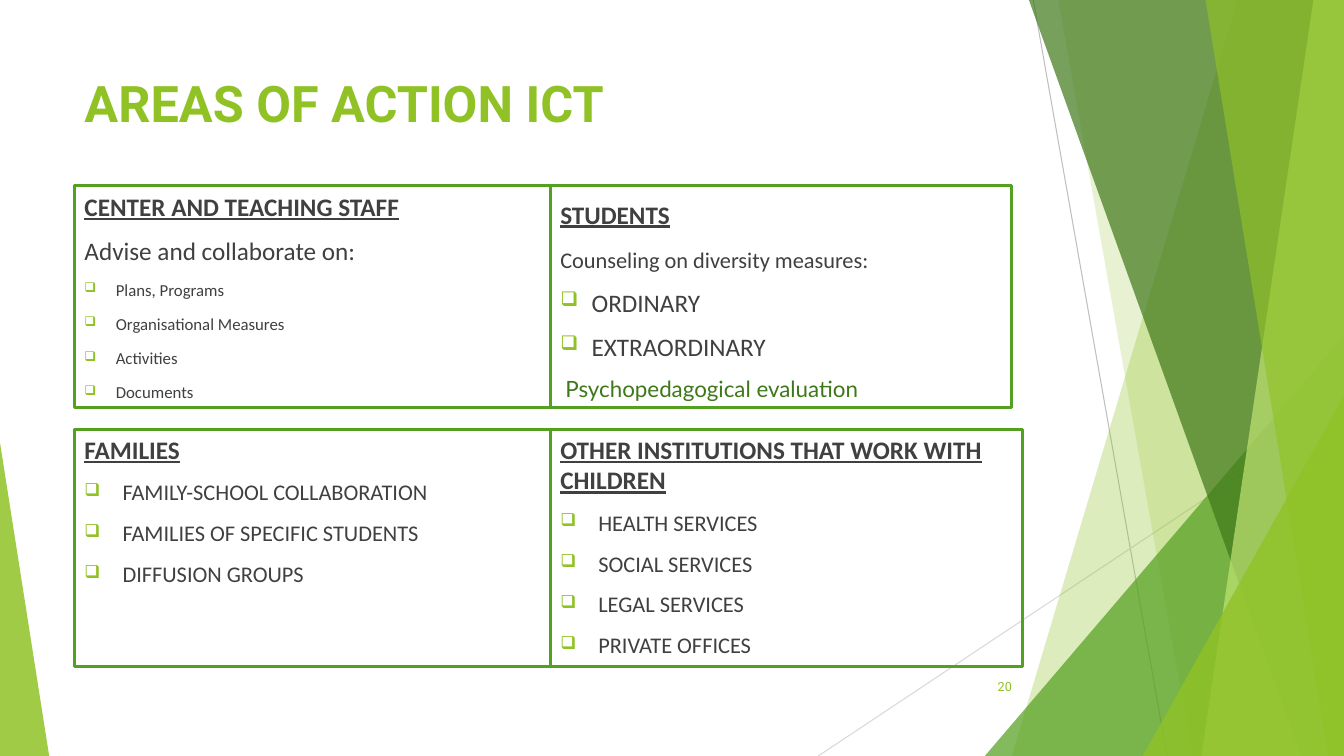
from lxml import etree
from pptx import Presentation
from pptx.dml.color import RGBColor
from pptx.enum.shapes import MSO_CONNECTOR, MSO_SHAPE
from pptx.enum.text import MSO_ANCHOR, PP_ALIGN
from pptx.oxml.ns import qn
from pptx.util import Cm, Pt

LINE, RECT, TRI = MSO_CONNECTOR.STRAIGHT, MSO_SHAPE.RECTANGLE, MSO_SHAPE.ISOSCELES_TRIANGLE
TOP, MID, BOTTOM = MSO_ANCHOR.TOP, MSO_ANCHOR.MIDDLE, MSO_ANCHOR.BOTTOM
LEFT, RIGHT = PP_ALIGN.LEFT, PP_ALIGN.RIGHT

HUES = {"lime": "90C226", "green": "54A021", "dark": "3F7819", "pale": "C0E474",
        "text": "404040", "gray": "BFBFBF", "mist": "D9D9D9"}
WIDE, HIGH = 33.87, 19.05

# Content: each line is (text, format)
TITLE, PAGE = "AREAS OF ACTION ICT", "20"
HEAD = {"bold": True, "under": True}
SMALL = {"size": 12, "hang": 0.79}
LARGE = {"hang": 0.79}
ITEM = {"size": 16, "hang": 0.96}
STAFF = [("CENTER AND TEACHING STAFF", HEAD), ("Advise and collaborate on:", {})] + [
    (t, SMALL) for t in ("Plans, Programs", "Organisational Measures", "Activities", "Documents")]
PUPILS = [("STUDENTS", HEAD),
          ("Counseling on diversity measures:", {"size": 16, "before": 12}),
          ("ORDINARY", LARGE), ("EXTRAORDINARY", LARGE),
          ("Psychopedagogical evaluation",
           {"size": 16, "font": "Lato", "hue": "dark", "indent": 0.13})]
HOMES = [("FAMILIES", HEAD)] + [
    (t, ITEM) for t in ("FAMILY-SCHOOL COLLABORATION", "FAMILIES OF SPECIFIC STUDENTS",
                        "DIFFUSION GROUPS")]
OTHERS = [("OTHER INSTITUTIONS THAT WORK WITH CHILDREN", HEAD)] + [
    (t, ITEM) for t in ("HEALTH SERVICES", "SOCIAL SERVICES", "LEGAL SERVICES",
                        "PRIVATE OFFICES")]

# Panels: left column, right column and its width, per row
COL, MIDX = 1.88, 13.87
ROWS = [(4.67, 5.59, BOTTOM, 11.63, STAFF, PUPILS),
        (10.82, 5.97, TOP, 11.89, HOMES, OTHERS)]

# Backdrop, back to front
RAYS = [(26.04, 0, 29.41, HIGH, "gray"), (WIDE, 10.24, 20.62, HIGH, "mist")]
BANDS = [  # ("band", top x, bottom x, hue, alpha) or ("tri", x, y, apex, hue, alpha)
    ("band", 31.19, 25.5, "lime", 30),
    ("band", 26.67, 30.05, "lime", 20),
    ("tri", 24.82, 8.46, 9.05, 1, "green", 72),
    ("band", 25.93, 32.79, "dark", 70),
    ("band", 33.1, 30.28, "pale", 70),
    ("band", 30.38, 33.48, "lime", 65),
    ("tri", 28.8, 9.98, 5.07, 1, "lime", 80),
    ("tri", 0, 11.15, 1.24, 0, "lime", 85)]

deck = Presentation()
deck.slide_width, deck.slide_height = Cm(WIDE), Cm(HIGH)
slide = deck.slides.add_slide(deck.slide_layouts[6])
shapes = slide.shapes


def color(name):
    return RGBColor.from_string(HUES[name])


def tint(shape, hue, alpha):
    shape.shadow.inherit = False
    shape.line.fill.background()
    shape.fill.solid()
    shape.fill.fore_color.rgb = color(hue)
    mark = shape.fill._xPr.find(qn("a:solidFill"))[0]
    etree.SubElement(mark, qn("a:alpha"), val=str(alpha * 1000))


def write(para, text, size=18, font="Calibri", hue="text", bold=False, under=False,
          align=LEFT, before=10, hang=0, indent=0):
    para.alignment, para.space_before = align, Pt(before)
    run = para.add_run()
    run.text = text
    face = run.font
    face.size, face.name, face.bold, face.underline = Pt(size), font, bold, under
    face.color.rgb = color(hue)
    props = para._p.get_or_add_pPr()
    if hang:
        props.set("marL", str(Cm(hang)))
        props.set("indent", str(-Cm(hang)))
        tone = etree.SubElement(props, qn("a:buClr"))
        etree.SubElement(tone, qn("a:srgbClr"), val=HUES["lime"])
        etree.SubElement(props, qn("a:buSzPct"), val="80000")
        etree.SubElement(props, qn("a:buChar"), char="❑")
    elif indent:
        props.set("marL", str(Cm(indent)))


def fill_text(shape, lines, anchor):
    frame = shape.text_frame
    frame.word_wrap, frame.vertical_anchor = True, anchor
    for i, (text, form) in enumerate(lines):
        write(frame.add_paragraph() if i else frame.paragraphs[0], text, **form)


def panel(x, y, w, h, lines, anchor):
    box = shapes.add_shape(RECT, Cm(x), Cm(y), Cm(w), Cm(h))
    box.shadow.inherit = False
    box.fill.background()
    box.line.color.rgb, box.line.width = color("green"), Pt(2.25)
    fill_text(box, lines, anchor)


def label(x, y, w, h, text, anchor, **form):
    box = shapes.add_textbox(Cm(x), Cm(y), Cm(w), Cm(h))
    fill_text(box, [(text, form)], anchor)


# Thin rays
for x1, y1, x2, y2, hue in RAYS:
    ray = shapes.add_connector(LINE, Cm(x1), Cm(y1), Cm(x2), Cm(y2))
    ray.line.color.rgb, ray.line.width = color(hue), Pt(0.75)
    etree.SubElement(ray._element.spPr, qn("a:effectLst"))

# Green facets
for kind, *data, hue, alpha in BANDS:
    if kind == "band":
        top, low = data
        pen = shapes.build_freeform(Cm(top), 0)
        pen.add_line_segments([(Cm(WIDE), 0), (Cm(WIDE), Cm(HIGH)), (Cm(low), Cm(HIGH))])
        facet = pen.convert_to_shape()
    else:
        x, y, w, apex = data
        facet = shapes.add_shape(TRI, Cm(x), Cm(y), Cm(w), Cm(HIGH - y))
        facet.adjustments[0] = apex
    tint(facet, hue, alpha)

# Four panels
for y, h, anchor, w, first, second in ROWS:
    panel(COL, y, MIDX - COL, h, first, anchor)
    panel(MIDX, y, w, h, second, anchor)

# Page number and title
label(23.85, 16.79, 1.9, 1.02, PAGE, MID, size=9, font="Roboto", hue="lime",
      align=RIGHT, before=0)
label(COL, 1.7, 23.88, 3.66, TITLE, TOP, size=36, font="Roboto", hue="lime",
      bold=True, before=0)

deck.save("out.pptx")
